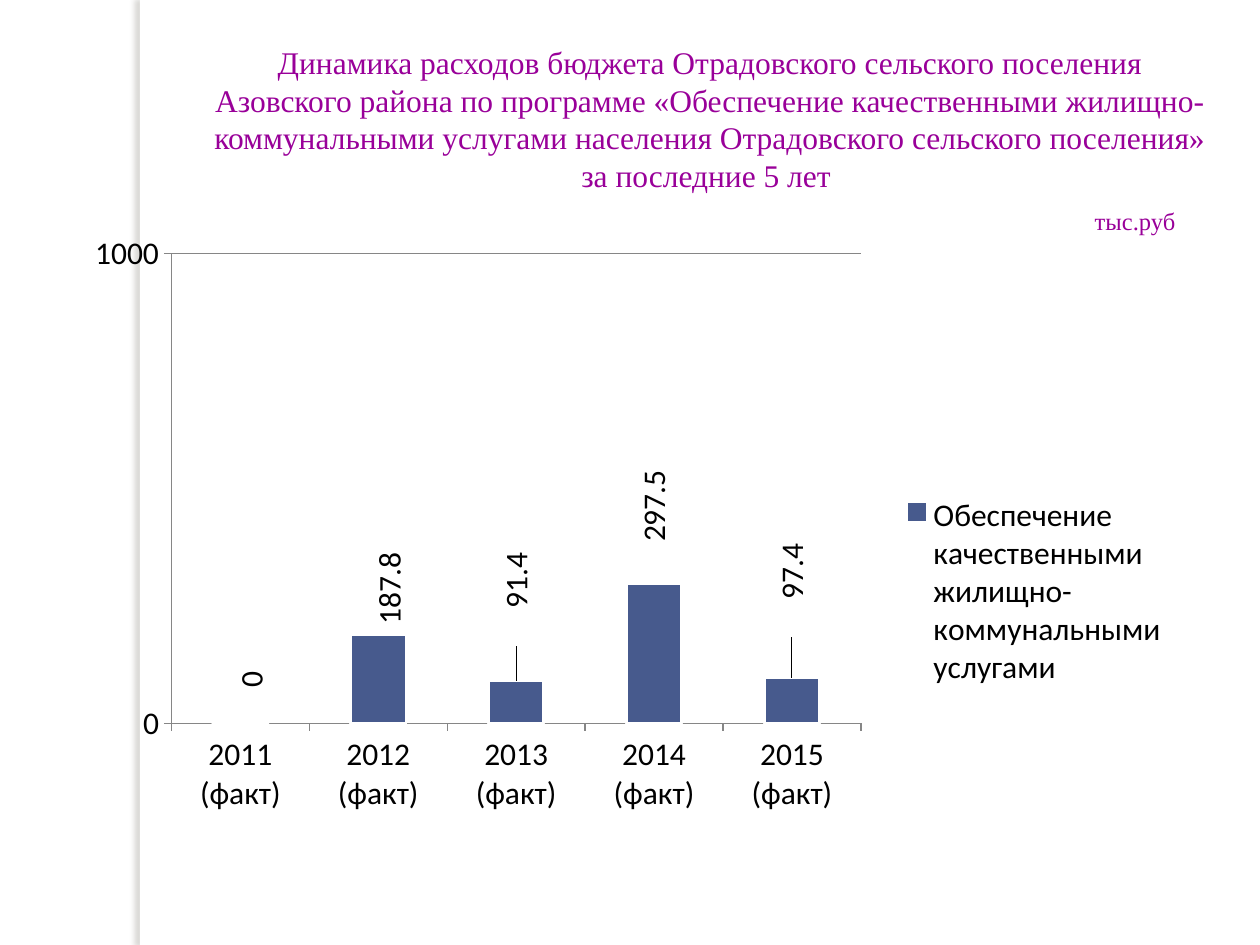
from typing import NamedTuple

from lxml import etree
from pptx import Presentation
from pptx.chart.data import CategoryChartData
from pptx.dml.color import RGBColor
from pptx.enum.chart import XL_CHART_TYPE, XL_LABEL_POSITION as LabelPos
from pptx.enum.chart import XL_LEGEND_POSITION as LegendPos, XL_TICK_MARK as Tick
from pptx.enum.shapes import MSO_SHAPE
from pptx.enum.text import PP_ALIGN
from pptx.oxml import parse_xml
from pptx.oxml.ns import nsdecls, qn
from pptx.util import Inches, Pt

PURPLE, BAR, AXIS, BLACK, WHITE = "990099", "475A8D", "868686", "000000", "FFFFFF"


class Year(NamedTuple):
    name: str
    value: float
    dx: float  # label offset as a share of the chart
    dy: float


YEARS = [
    Year("2011 (факт)", 0, 0.01, -0.05),
    Year("2012 (факт)", 187.8, 0.01, -0.01),
    Year("2013 (факт)", 91.4, 0, -0.11),
    Year("2014 (факт)", 297.5, 0, -0.06),
    Year("2015 (факт)", 97.4, 0, -0.12),
]


def rgb(color: str) -> RGBColor:
    return RGBColor.from_string(color)


def add_text(p, text: str, size: float) -> None:
    r = p.add_run()
    r.text = text
    r.font.name, r.font.size = "Times New Roman", Pt(size)
    r.font.color.rgb = rgb(PURPLE)


def make_layout(target: str = "", **values: float):
    """Manual chart layout; x and y are edges when a target or size is given."""
    inner = f'<c:layoutTarget val="{target}"/>' if target else ""
    if "w" in values:
        inner += '<c:xMode val="edge"/><c:yMode val="edge"/>'
    inner += "".join(f'<c:{k} val="{v}"/>' for k, v in values.items())
    return parse_xml(f'<c:layout {nsdecls("c")}><c:manualLayout>{inner}'
                     '</c:manualLayout></c:layout>')


def style_axis(axis) -> None:
    axis.major_tick_mark, axis.minor_tick_mark = Tick.OUTSIDE, Tick.NONE
    axis.format.line.color.rgb = rgb(AXIS)
    axis.format.line.width = Pt(0.75)


def style_label(label, year: Year) -> None:
    label.font.size = Pt(18)
    label.font.color.rgb = rgb(BLACK)
    label.position = LabelPos.OUTSIDE_END
    dlbl = label._get_or_add_dLbl()
    body = dlbl.find(qn("c:txPr")).find(qn("a:bodyPr"))
    body.set("rot", "-5400000")
    body.set("vert", "horz")
    dlbl.insert(1, make_layout(x=year.dx, y=year.dy))


prs = Presentation()
prs.slide_width, prs.slide_height = Inches(10), Inches(7.5)
s = prs.slides.add_slide(prs.slide_layouts[6])

# Vertical strip with a soft shadow on its left
strip = s.shapes.add_shape(MSO_SHAPE.RECTANGLE, Inches(1.11), 0, Inches(0.08), Inches(7.5))
strip.fill.solid()
strip.fill.fore_color.rgb = rgb(WHITE)
strip.line.fill.background()
strip.shadow.inherit = False
effects = strip._element.spPr.find(qn("a:effectLst"))
shadow = etree.SubElement(effects, qn("a:outerShdw"), blurRad=str(Pt(3)),
                          dist=str(Pt(3)), dir="10800000", algn="tl", rotWithShape="0")
tint = etree.SubElement(shadow, qn("a:srgbClr"), val="736F63")
etree.SubElement(tint, qn("a:alpha"), val="25000")

# Title, with the unit at a right tab stop
tf = s.shapes.add_textbox(Inches(1.54), Inches(0.29), Inches(8.19), Inches(1.65)).text_frame
tf.word_wrap = True
p = tf.paragraphs[0]
p.alignment = PP_ALIGN.CENTER
add_text(p, "Динамика расходов бюджета Отрадовского сельского поселения Азовского района "
            "по программе «Обеспечение качественными жилищно-коммунальными услугами "
            "населения Отрадовского сельского поселения» за последние 5 лет ", 18)
p = tf.add_paragraph()
p.space_before = Pt(7)
add_text(p, "\tтыс.руб", 14)
tabs = etree.SubElement(p._p.get_or_add_pPr(), qn("a:tabLst"))
etree.SubElement(tabs, qn("a:tab"), pos=str(Inches(7.69)), algn="r")

# Column chart
data = CategoryChartData()
data.categories = [y.name for y in YEARS]
data.add_series("Обеспечение качественными жилищно-коммунальными услугами",
                [y.value for y in YEARS])
chart = s.shapes.add_chart(XL_CHART_TYPE.COLUMN_CLUSTERED, Inches(0.58), Inches(1.84),
                           Inches(8.87), Inches(4.84), data).chart
chart.has_title = False
chart.font.name, chart.font.size = "Calibri", Pt(18)
chart.font.color.rgb = rgb(BLACK)
area = chart._chartSpace.chart.plotArea
for old in area.findall(qn("c:layout")):
    area.remove(old)
area.insert(0, make_layout("inner", x=0.088, y=0.036, w=0.617, h=0.77))

# Axes
style_axis(chart.category_axis)
axis = chart.value_axis
style_axis(axis)
axis.minimum_scale, axis.maximum_scale, axis.major_unit = 0, 1000, 1000
axis.has_major_gridlines = True
axis.major_gridlines.format.line.color.rgb = rgb(AXIS)
axis.major_gridlines.format.line.width = Pt(0.75)

# Bars and their turned labels
plot = chart.plots[0]
plot.vary_by_categories = False
plot.gap_width = 150
series = plot.series[0]
series.format.fill.solid()
series.format.fill.fore_color.rgb = rgb(BAR)
series.format.line.color.rgb = rgb(WHITE)
series.format.line.width = Pt(1.5)
for i, year in enumerate(YEARS):
    style_label(series.points[i].data_label, year)

# Legend
chart.has_legend = True
legend = chart.legend
legend.position, legend.include_in_layout = LegendPos.RIGHT, False
legend.font.size = Pt(18)
for old in legend._element.findall(qn("c:layout")):
    legend._element.remove(old)
legend._element.find(qn("c:legendPos")).addnext(
    make_layout(x=0.73, y=0.43, w=0.26, h=0.32))

prs.save("out.pptx")
